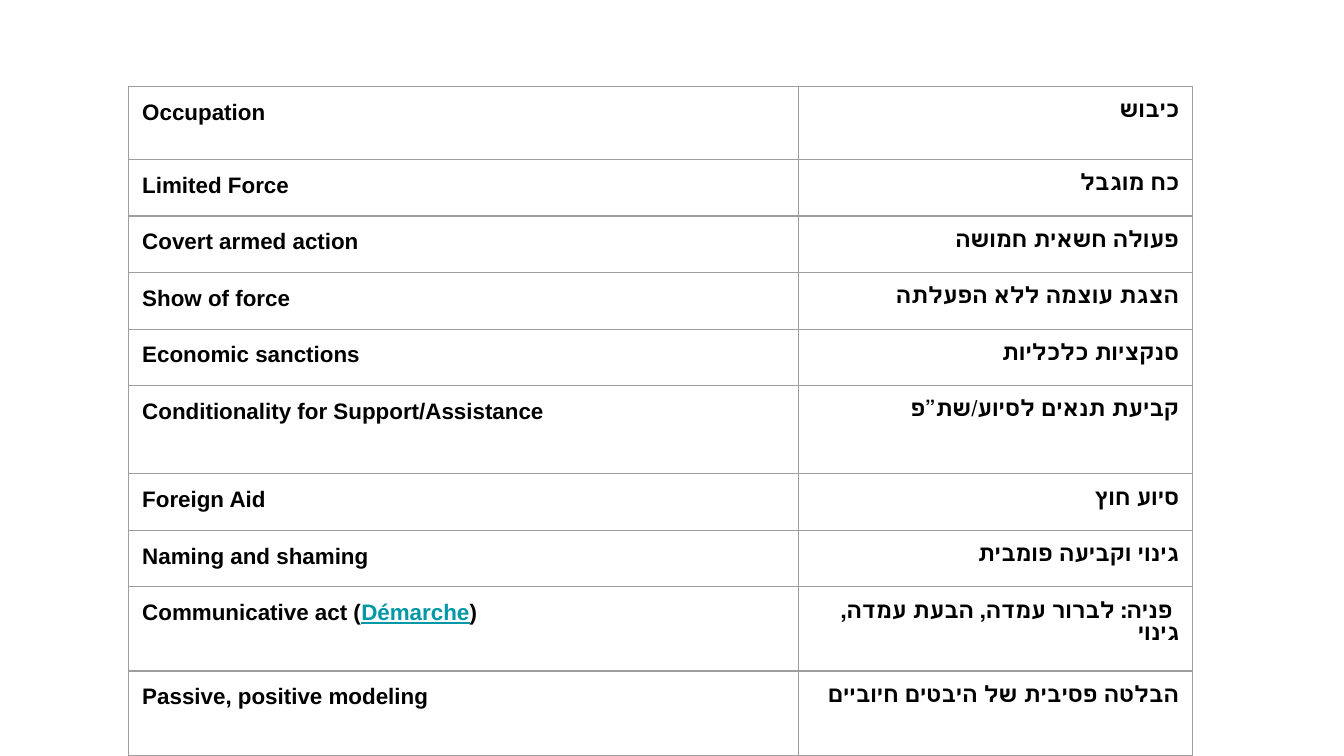
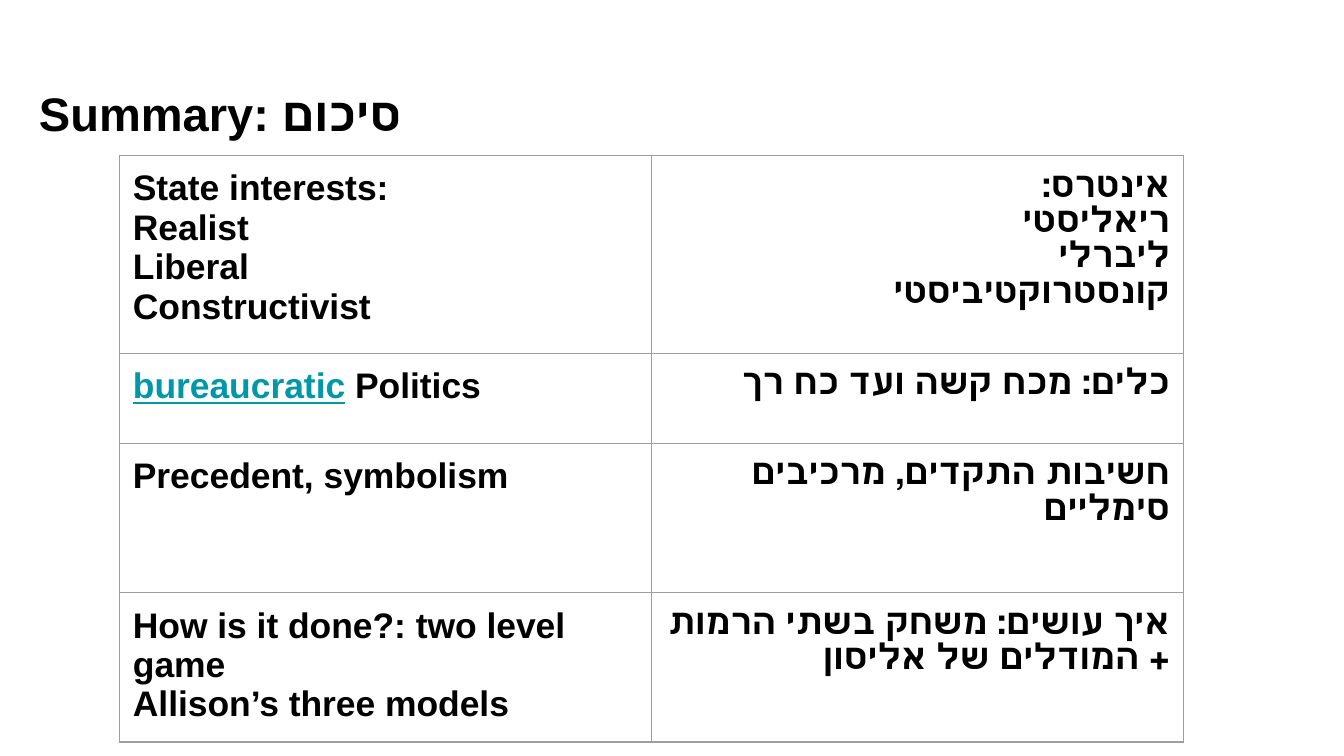
from dataclasses import dataclass

import lxml.etree
import pptx
import pptx.dml.color
import pptx.enum.text
import pptx.oxml.ns
import pptx.util

Pt = pptx.util.Pt
ALIGN = pptx.enum.text.PP_ALIGN
ANCHOR = pptx.enum.text.MSO_ANCHOR


@dataclass(frozen=True)
class Theme:
    font: str = "Arial"
    ink: str = "000000"
    link: str = "0097A7"
    paper: str = "FFFFFF"
    border: str = "9E9E9E"
    border_width: float = 0.75
    inset: float = 7.2
    title_size: float = 25.2
    policy_size: float = 12
    summary_size: float = 19


THEME = Theme()
MARGINS = {f"margin_{side}": Pt(THEME.inset) for side in ("left", "top", "right", "bottom")}

# Each row pairs an English cell with a Hebrew one; |words| between bars look like links
POLICY_TOOLS = [
    ("Occupation", "כיבוש"),
    ("Limited Force", "כח מוגבל"),
    ("Covert armed action", "פעולה חשאית חמושה"),
    ("Show of force", "הצגת עוצמה ללא הפעלתה"),
    ("Economic sanctions", "סנקציות כלכליות"),
    ("Conditionality for Support/Assistance", "קביעת תנאים לסיוע/שת”פ"),
    ("Foreign Aid", "סיוע חוץ"),
    ("Naming and shaming", "גינוי וקביעה פומבית"),
    ("Communicative act (|Démarche|)", " פניה: לברור עמדה, הבעת עמדה, גינוי"),
    ("Passive, positive modeling", "הבלטה פסיבית של היבטים חיוביים"),
]
POLICY_HEIGHTS = [39.3, 30.3, 30.3, 30.3, 30.3, 47.2, 30.3, 30.3, 45.2, 45.2]

SUMMARY = [
    ("State interests:\nRealist\nLiberal\nConstructivist",
     "אינטרס:\nריאליסטי\nליברלי\nקונסטרוקטיביסטי"),
    ("|bureaucratic| Politics", "כלים: מכח קשה ועד כח רך"),
    ("Precedent, symbolism", "חשיבות התקדים, מרכיבים סימליים"),
    ("How is it done?: two level game\nAllison’s three models",
     "איך עושים: משחק בשתי הרמות + המודלים של אליסון"),
]
SUMMARY_HEIGHTS = [106, 48.2, 80, 80]


def rgb(value):
    return pptx.dml.color.RGBColor.from_string(value)


def apply(target, formats):
    for name, value in formats.items():
        setattr(target, name, value)


# Text: one paragraph per line, one run per plain or linked piece
def write_lines(frame, text, size, rtl=False):
    for index, line in enumerate(text.split("\n")):
        paragraph = frame.paragraphs[0] if index == 0 else frame.add_paragraph()
        paragraph.alignment = ALIGN.RIGHT if rtl else ALIGN.LEFT
        if rtl:
            paragraph._p.get_or_add_pPr().set("rtl", "1")
        for order, piece in enumerate(line.split("|")):
            if not piece:
                continue
            linked = order % 2 == 1
            run = paragraph.add_run()
            run.text = piece
            apply(run.font, {"name": THEME.font, "size": Pt(size),
                             "bold": True, "underline": linked})
            run.font.color.rgb = rgb(THEME.link if linked else THEME.ink)


# Cell borders go before the fill in the cell properties
def draw_borders(cell):
    properties = cell._tc.get_or_add_tcPr()
    qn = pptx.oxml.ns.qn
    for position, side in enumerate("LRTB"):
        line = lxml.etree.Element(qn(f"a:ln{side}"), w=str(Pt(THEME.border_width)))
        fill = lxml.etree.SubElement(line, qn("a:solidFill"))
        lxml.etree.SubElement(fill, qn("a:srgbClr"), val=THEME.border)
        properties.insert(position, line)


def add_glossary(slide, left, top, widths, heights, rows, size):
    table = slide.shapes.add_table(
        len(rows), len(widths), Pt(left), Pt(top),
        Pt(sum(widths)), Pt(sum(heights))).table
    apply(table, {"first_row": False, "horz_banding": False})
    for column, width in zip(table.columns, widths):
        column.width = Pt(width)
    for row, height, texts in zip(table.rows, heights, rows):
        row.height = Pt(height)
        for position, (cell, text) in enumerate(zip(row.cells, texts)):
            apply(cell, {**MARGINS, "vertical_anchor": ANCHOR.TOP})
            cell.fill.solid()
            cell.fill.fore_color.rgb = rgb(THEME.paper)
            draw_borders(cell)
            write_lines(cell.text_frame, text, size, rtl=position == 1)


def add_title(slide, text):
    title = slide.shapes.title
    apply(title, {"left": Pt(13.7), "top": Pt(38.2), "width": Pt(671), "height": Pt(45.4)})
    apply(title.text_frame, {**MARGINS, "word_wrap": True, "vertical_anchor": ANCHOR.TOP,
                             "auto_size": pptx.enum.text.MSO_AUTO_SIZE.NONE})
    write_lines(title.text_frame, text, THEME.title_size)


def main():
    deck = pptx.Presentation()
    apply(deck, {"slide_width": Pt(720), "slide_height": Pt(405)})
    title_only, blank = deck.slide_layouts[5], deck.slide_layouts[6]

    # Policy tools
    tools = deck.slides.add_slide(blank)
    add_glossary(tools, 69, 46.2, [359, 211], POLICY_HEIGHTS,
                 POLICY_TOOLS, THEME.policy_size)

    # Summary
    summary = deck.slides.add_slide(title_only)
    add_title(summary, "Summary: סיכום")
    add_glossary(summary, 64, 83.3, [285, 285], SUMMARY_HEIGHTS,
                 SUMMARY, THEME.summary_size)

    deck.save("out.pptx")


if __name__ == "__main__":
    main()
